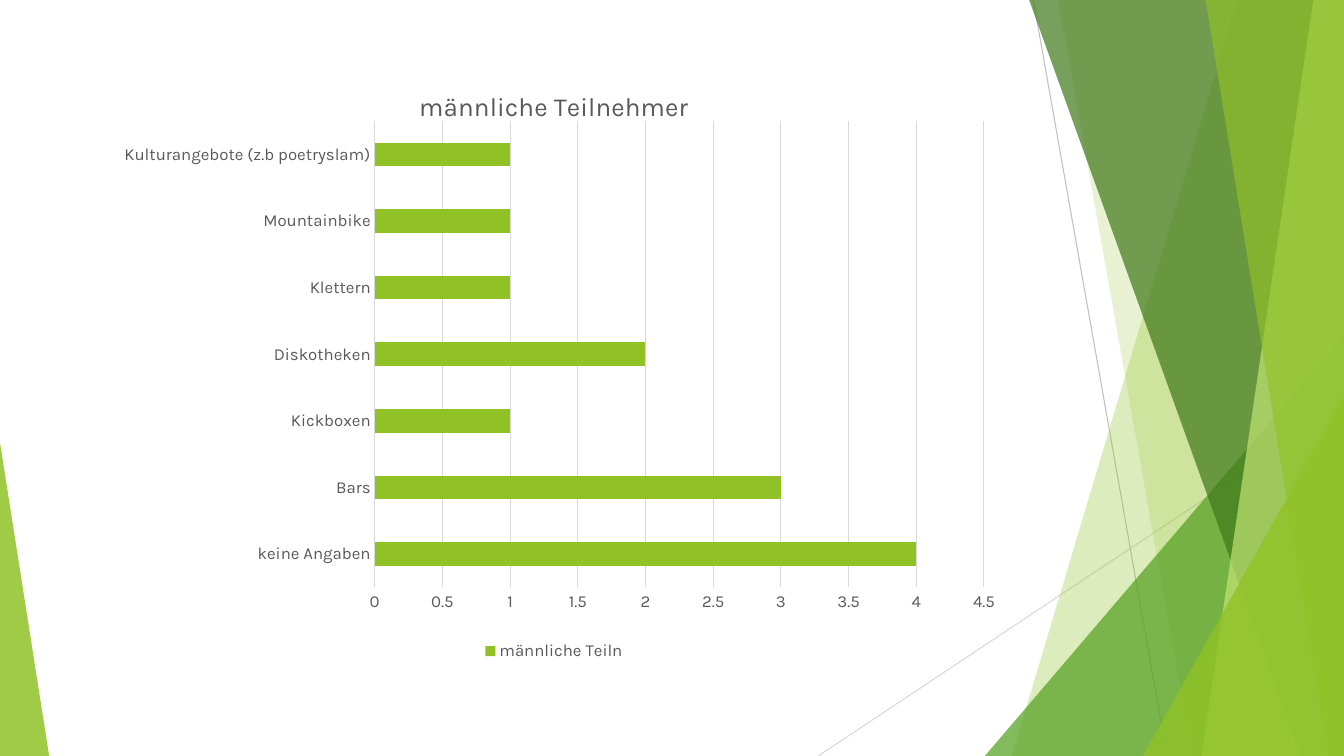
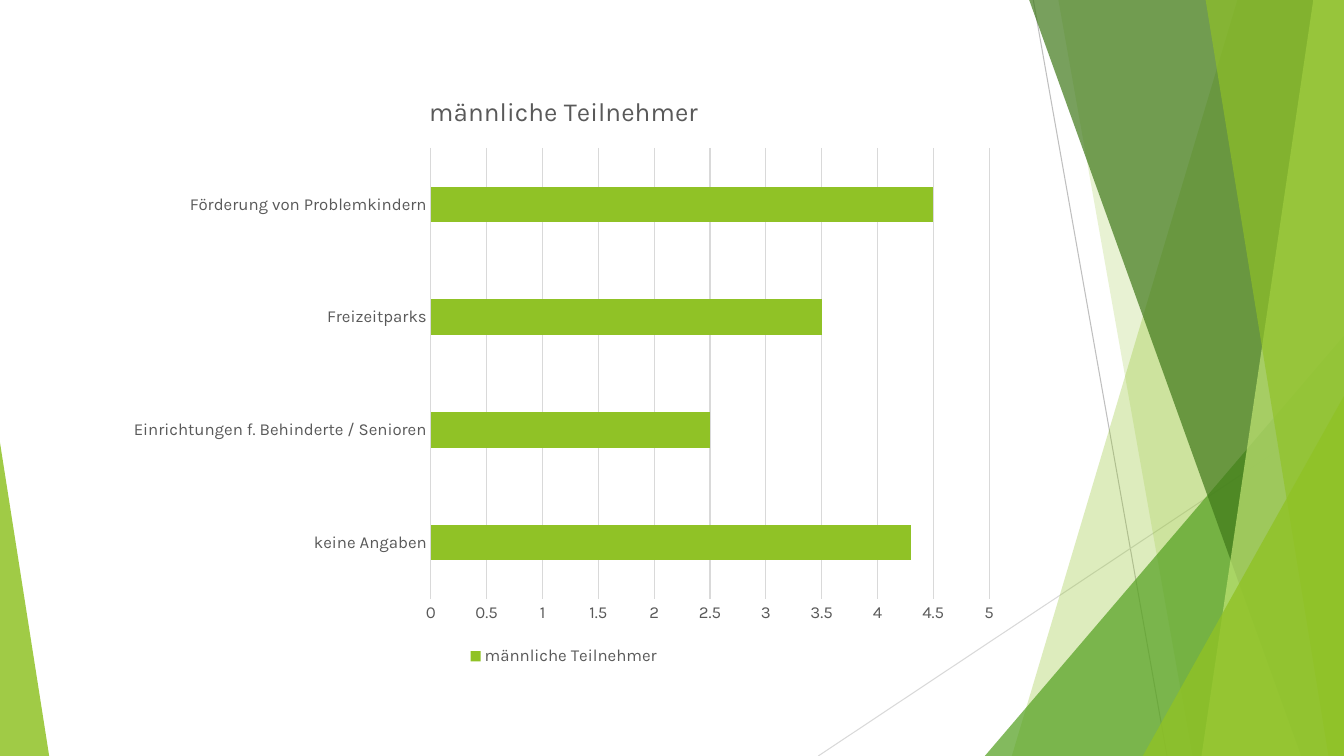
"""Build two bar chart slides on a shared layout of green facets."""
from lxml.etree import SubElement
from pptx import Presentation
from pptx.chart.data import CategoryChartData
from pptx.dml.color import RGBColor
from pptx.enum.chart import XL_CHART_TYPE, XL_LEGEND_POSITION, XL_TICK_MARK
from pptx.enum.shapes import MSO_CONNECTOR, MSO_SHAPE
from pptx.oxml import parse_xml
from pptx.oxml.ns import nsdecls, qn
from pptx.util import Cm, Pt

COLORS = {
    "lime": "90C226",
    "green": "54A021",
    "forest": "3F7819",
    "pale": "C0E474",
    "text": "595959",
    "grid": "D9D9D9",
    "ray": "BFBFBF",
}
FONT = "Karla"
WIDTH, HEIGHT = 33.87, 19.05


def color(name):
    return RGBColor.from_string(COLORS[name])


def paint(facet, name, opacity):
    facet.shadow.inherit = False
    facet.line.fill.background()
    facet.fill.solid()
    facet.fill.fore_color.rgb = color(name)
    tint = facet.element.xpath("./p:spPr/a:solidFill/a:srgbClr")[0]
    SubElement(tint, qn("a:alpha")).set("val", str(opacity * 1000))


prs = Presentation()
prs.slide_width, prs.slide_height = Cm(WIDTH), Cm(HEIGHT)
layout = prs.slide_layouts[6]
slides = [prs.slides.add_slide(layout) for _ in range(2)]

backdrop = slides[0].shapes.add_group_shape()

RAYS = [(26.04, 0, 29.41, HEIGHT, "ray"), (WIDTH, 10.24, 20.62, HEIGHT, "grid")]
for x1, y1, x2, y2, name in RAYS:
    ray = backdrop.shapes.add_connector(
        MSO_CONNECTOR.STRAIGHT, Cm(x1), Cm(y1), Cm(x2), Cm(y2))
    ray.line.color.rgb = color(name)
    ray.line.width = Pt(0.75)
    SubElement(ray.element.spPr, qn("a:effectLst"))

# Bands: top x, bottom x. Triangles: left, top, width, apex position.
FACETS = [
    ("band", (31.19, 25.5), "lime", 30),
    ("band", (26.67, 30.05), "lime", 20),
    ("triangle", (24.82, 8.46, 9.05, 1), "green", 72),
    ("band", (25.93, 32.79), "forest", 70),
    ("band", (33.1, 30.28), "pale", 70),
    ("band", (30.38, 33.48), "lime", 65),
    ("triangle", (28.8, 9.98, 5.07, 1), "lime", 80),
    ("triangle", (0, 11.15, 1.24, 0), "lime", 85),
]
for kind, geometry, name, opacity in FACETS:
    if kind == "band":
        top_x, bottom_x = geometry
        outline = backdrop.shapes.build_freeform(Cm(top_x), Cm(-0.02))
        outline.add_line_segments([
            (Cm(WIDTH), Cm(-0.02)), (Cm(WIDTH), Cm(HEIGHT)),
            (Cm(bottom_x), Cm(HEIGHT))])
        facet = outline.convert_to_shape()
    else:
        left, top, width, apex = geometry
        facet = backdrop.shapes.add_shape(
            MSO_SHAPE.ISOSCELES_TRIANGLE,
            Cm(left), Cm(top), Cm(width), Cm(HEIGHT - top))
        facet.adjustments[0] = apex
    paint(facet, name, opacity)

layout.shapes.element.append(backdrop.element)

CHARTS = [
    {
        "at": (2.67, 1.7), "series": "männliche Teiln", "gap": 182, "maximum": 4.5,
        "plot": {"x": 0.3, "y": 0.09, "w": 0.68, "h": 0.78},
        "answers": [
            ("keine Angaben", 4), ("Bars", 3), ("Kickboxen", 1),
            ("Diskotheken", 2), ("Klettern", 1), ("Mountainbike", 1),
            ("Kulturangebote (z.b poetryslam)", 1)],
    },
    {
        "at": (2.92, 1.83), "series": "männliche Teilnehmer", "gap": 219, "maximum": 5,
        "plot": None,
        "answers": [
            ("keine Angaben", 4.3),
            ("Einrichtungen f. Behinderte / Senioren", 2.5),
            ("Freizeitparks", 3.5), ("Förderung von Problemkindern", 4.5)],
    },
]
for slide, survey in zip(slides, CHARTS):
    answers = CategoryChartData()
    answers.categories = [label for label, _ in survey["answers"]]
    answers.add_series(survey["series"], [count for _, count in survey["answers"]])
    left, top = survey["at"]
    chart = slide.shapes.add_chart(
        XL_CHART_TYPE.BAR_CLUSTERED, Cm(left), Cm(top), Cm(22.58), Cm(15.06),
        answers).chart
    chart.font.name = FONT
    chart.font.size = Pt(12)
    chart.font.color.rgb = color("text")

    chart.has_title = True
    heading = chart.chart_title.text_frame.paragraphs[0]
    heading.text = "männliche Teilnehmer"
    heading.font.name = FONT
    heading.font.size = Pt(18.6)
    heading.font.bold = False
    heading.font.color.rgb = color("text")

    chart.has_legend = True
    chart.legend.position = XL_LEGEND_POSITION.BOTTOM
    chart.legend.include_in_layout = False

    bars = chart.plots[0]
    bars.gap_width = survey["gap"]
    bars.vary_by_categories = False
    bars.series[0].format.fill.solid()
    bars.series[0].format.fill.fore_color.rgb = color("lime")

    for axis in (chart.category_axis, chart.value_axis):
        axis.major_tick_mark = axis.minor_tick_mark = XL_TICK_MARK.NONE
    scale = chart.value_axis
    scale.minimum_scale, scale.maximum_scale = 0, survey["maximum"]
    scale.major_unit = 0.5
    scale.format.line.fill.background()
    for line in (chart.category_axis.format.line, scale.major_gridlines.format.line):
        line.color.rgb = color("grid")
        line.width = Pt(0.75)

    if survey["plot"]:
        plot_area = chart.element.xpath("c:chart/c:plotArea")[0]
        for automatic in plot_area.xpath("c:layout"):
            plot_area.remove(automatic)
        modes = '<c:xMode val="edge"/><c:yMode val="edge"/>'
        extents = "".join(
            f'<c:{side} val="{share}"/>' for side, share in survey["plot"].items())
        plot_area.insert(0, parse_xml(
            f'<c:layout {nsdecls("c")}><c:manualLayout><c:layoutTarget val="inner"/>'
            f"{modes}{extents}</c:manualLayout></c:layout>"))

prs.save("out.pptx")
